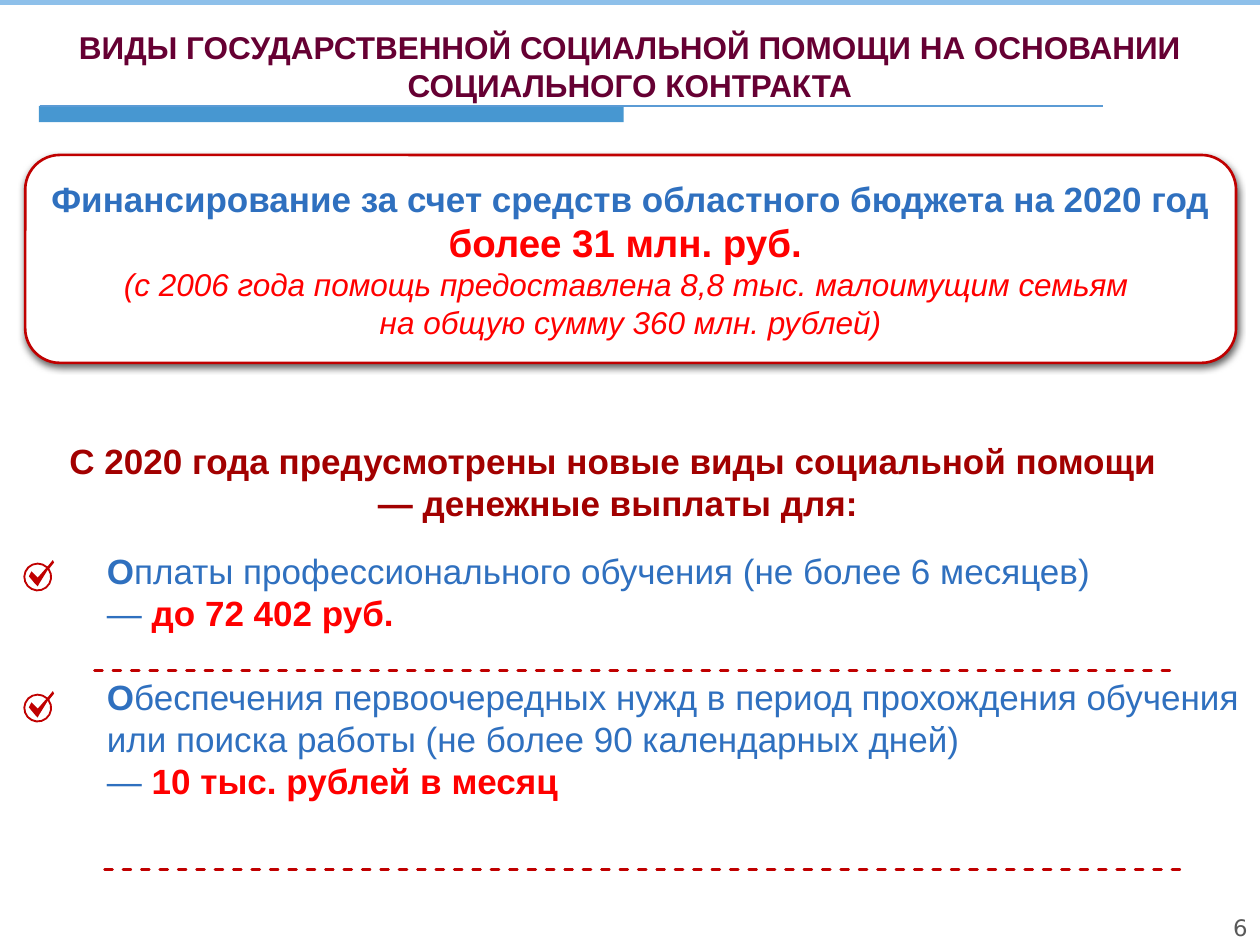
from math import cos, radians, sin

from lxml.etree import SubElement
from pptx import Presentation
from pptx.dml.color import RGBColor
from pptx.enum.dml import MSO_LINE
from pptx.enum.shapes import MSO_CONNECTOR, MSO_SHAPE
from pptx.enum.text import MSO_ANCHOR, MSO_AUTO_SIZE, PP_ALIGN
from pptx.oxml.ns import qn
from pptx.util import Inches, Pt

BLUE, RED, CRIMSON = "2F70BF", "FF0000", "C00000"
TICK = [(10, 55), (0, 75), (-20, 55), (-70, -5), (-50, -45), (0, 5)]
ARC_STEPS = 16


def color(value):
    return RGBColor.from_string(value)


def place(shape, left, top, width, height):
    shape.left, shape.top = Inches(left), Inches(top)
    shape.width, shape.height = Inches(width), Inches(height)


def format_font(font, size, fill, bold=False, italic=False, name="Arial"):
    font.name, font.size, font.bold, font.italic = name, Pt(size), bold, italic
    font.color.rgb = color(fill)


def add_paragraph(frame, runs, size, fill, align=PP_ALIGN.LEFT, bold=False,
                  italic=False, name="Arial"):
    """Add a paragraph; runs are strings or (string, font settings) pairs."""
    first = not frame.paragraphs[0].runs
    paragraph = frame.paragraphs[0] if first else frame.add_paragraph()
    paragraph.alignment = align
    format_font(paragraph.font, size, fill, bold, italic, name)
    for item in runs:
        text, changes = (item, None) if isinstance(item, str) else item
        run = paragraph.add_run()
        run.text = text
        if changes:
            format_font(run.font, **{"size": size, "fill": fill, **changes})
    return paragraph


def add_text_box(slide, left, top, width, height):
    box = slide.shapes.add_textbox(0, 0, 0, 0)
    place(box, left, top, width, height)
    box.text_frame.word_wrap = True
    return box.text_frame


def add_bar(slide, left, top, width, height, fill, opacity=100):
    bar = slide.shapes.add_shape(MSO_SHAPE.RECTANGLE, 0, 0, 0, 0)
    place(bar, left, top, width, height)
    bar.shadow.inherit = False
    bar.fill.solid()
    bar.fill.fore_color.rgb = color(fill)
    bar.line.fill.background()
    if opacity < 100:
        fill_color = bar._element.spPr.find(qn("a:solidFill"))[0]
        SubElement(fill_color, qn("a:alpha"), val=str(opacity * 1000))


def add_rule(slide, left, right, y, line_color, width, dash=None):
    rule = slide.shapes.add_connector(
        MSO_CONNECTOR.STRAIGHT, Inches(left), Inches(y), Inches(right), Inches(y))
    rule.line.color.rgb = color(line_color)
    rule.line.width = Pt(width)
    if dash:
        rule.line.dash_style = dash
        rule._element.spPr.find(qn("a:ln")).set("cap", "rnd")
    SubElement(rule._element.spPr, qn("a:effectLst"))


def open_arc(radius):
    """Points of a circle, anticlockwise, open at its upper right."""
    angles = [radians(-47 - step * 349 / ARC_STEPS) for step in range(ARC_STEPS + 1)]
    return [(radius * cos(angle), radius * sin(angle)) for angle in angles]


def add_check_icon(slide, x, y):
    """Draw a ringed tick around the centre (x, y)."""
    outer = open_arc(114) + [(130, -115), (120, -135)]
    inner = open_arc(99) + TICK
    builder = slide.shapes.build_freeform(*outer[0], scale=Inches(1) / 1000)
    builder.add_line_segments(outer[1:], close=True)
    builder.move_to(*inner[0])
    builder.add_line_segments(inner[1:], close=True)
    icon = builder.convert_to_shape(Inches(x), Inches(y))
    icon.shadow.inherit = False
    icon.fill.solid()
    icon.fill.fore_color.rgb = color(CRIMSON)
    icon.line.fill.background()


def add_shadow(shape, blur, distance, opacity):
    shape.shadow.inherit = False
    effects = shape._element.spPr.find(qn("a:effectLst"))
    shadow = SubElement(effects, qn("a:outerShdw"), blurRad=str(Pt(blur)),
                        dist=str(Pt(distance)), dir="5400000", rotWithShape="0")
    shade = SubElement(shadow, qn("a:srgbClr"), val="000000")
    SubElement(shade, qn("a:alpha"), val=str(opacity * 1000))


def add_title(slide, text):
    title = slide.shapes.title
    place(title, 0, 0.17, 10, 0.65)
    frame = title.text_frame
    frame.auto_size = MSO_AUTO_SIZE.NONE
    frame.vertical_anchor = MSO_ANCHOR.TOP
    add_paragraph(frame, [text], 18, "660033", PP_ALIGN.CENTER, bold=True)


def add_funding_panel(slide):
    panel = slide.shapes.add_shape(MSO_SHAPE.ROUNDED_RECTANGLE, 0, 0, 0, 0)
    place(panel, 0.2, 1.23, 9.61, 1.65)
    panel.fill.solid()
    panel.fill.fore_color.rgb = color("FFFFFF")
    panel.line.color.rgb = color(CRIMSON)
    panel.line.width = Pt(1.5)
    add_shadow(panel, 4.5, 1.5, 63)
    frame = panel.text_frame
    frame.vertical_anchor = MSO_ANCHOR.MIDDLE
    add_paragraph(frame, [
        "Финансирование за счет средств областного бюджета на 2020 год ",
        ("более 31 млн. руб. ", {"size": 22, "fill": RED, "bold": True}),
    ], 20, BLUE, PP_ALIGN.CENTER, bold=True)
    for text in ("(с 2006 года помощь предоставлена 8,8 тыс. малоимущим семьям ",
                 "на общую сумму 360 млн. рублей)"):
        add_paragraph(frame, [text], 18, RED, PP_ALIGN.CENTER, italic=True)


def add_payments(slide):
    heading = add_text_box(slide, 0.24, 3.44, 9.33, 0.77)
    for text in ("С 2020 года предусмотрены новые виды социальной помощи ",
                 "— денежные выплаты для:"):
        add_paragraph(heading, [text], 20, "A20000", PP_ALIGN.CENTER, bold=True)

    payments = [
        ("О", "платы профессионального обучения (не более 6 месяцев)",
         "до 72 402 руб."),
        ("О", "беспечения первоочередных нужд в период прохождения обучения "
              "или поиска работы (не более 90 календарных дней)",
         "10 тыс. рублей в месяц"),
    ]
    frame = add_text_box(slide, 0.75, 4.31, 9.52, 2.77)
    for index, (initial, purpose, amount) in enumerate(payments):
        paragraph = add_paragraph(
            frame, [(initial, {"bold": True}), purpose], 20, BLUE)
        paragraph.space_before = Pt(24 * index)
        add_paragraph(frame, ["— ", (amount, {"fill": RED, "bold": True})], 20, BLUE)
        add_check_icon(slide, 0.3, 4.58 + 1.04 * index)


def main():
    presentation = Presentation()
    presentation.slide_width, presentation.slide_height = Inches(10), Inches(7.5)
    slide = presentation.slides.add_slide(presentation.slide_layouts[5])

    add_bar(slide, 0.31, 0.84, 4.64, 0.13, "0070C0", opacity=72)
    add_rule(slide, 0.32, 8.75, 0.84, "5B9BD5", 1)
    add_bar(slide, 0, -0.03, 10, 0.07, "8EC0EA")
    add_title(slide, "ВИДЫ ГОСУДАРСТВЕННОЙ СОЦИАЛЬНОЙ ПОМОЩИ НА ОСНОВАНИИ "
                     "СОЦИАЛЬНОГО КОНТРАКТА")
    add_funding_panel(slide)
    add_payments(slide)
    for left, y in ((0.75, 5.32), (0.83, 6.9)):
        add_rule(slide, left, left + 8.58, y, CRIMSON, 1.5, MSO_LINE.DASH)
    page_number = add_text_box(slide, 9.29, 7.2, 0.71, 0.3)
    add_paragraph(page_number, ["6"], 13, "595959", PP_ALIGN.RIGHT, name="DejaVu Sans")

    presentation.save("out.pptx")


if __name__ == "__main__":
    main()
